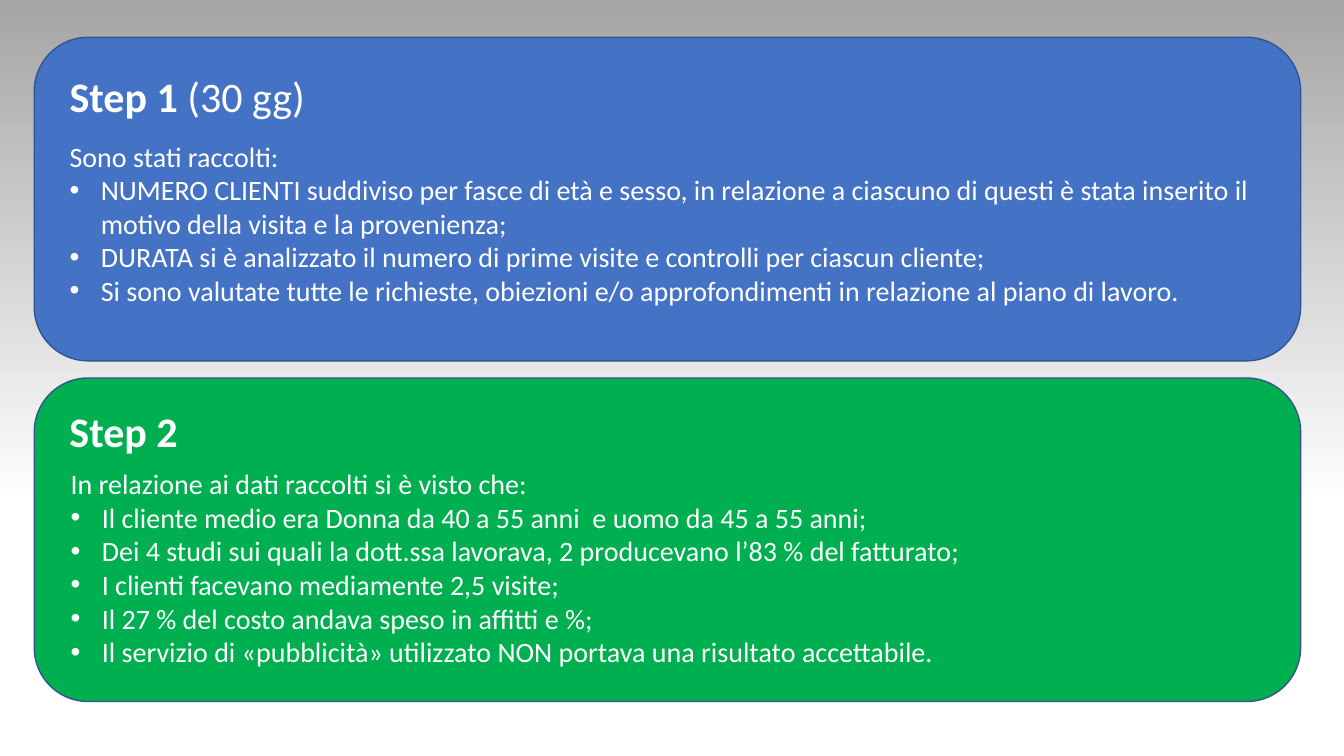
from lxml.etree import SubElement
from pptx import Presentation
from pptx.dml.color import RGBColor
from pptx.enum.shapes import MSO_SHAPE
from pptx.enum.text import MSO_ANCHOR, MSO_AUTO_SIZE, PP_ALIGN
from pptx.oxml.ns import qn
from pptx.util import Inches, Pt

WHITE = "FFFFFF"
FIRST = [
    "Sono stati raccolti:",
    "NUMERO CLIENTI suddiviso per fasce di età e sesso, in relazione a ciascuno di questi è stata inserito il "
    "motivo della visita e la provenienza;",
    "DURATA si è analizzato il numero di prime visite e controlli per ciascun cliente;",
    "Si sono valutate tutte le richieste, obiezioni e/o approfondimenti in relazione al piano di lavoro.",
]
SECOND = [
    "In relazione ai dati raccolti si è visto che:",
    "Il cliente medio era Donna da 40 a 55 anni  e uomo da 45 a 55 anni;",
    "Dei 4 studi sui quali la dott.ssa lavorava, 2 producevano l’83 % del fatturato;",
    "I clienti facevano mediamente 2,5 visite;",
    "Il 27 % del costo andava speso in affitti e %;",
    "Il servizio di «pubblicità» utilizzato NON portava una risultato accettabile.",
]


def color(value):
    return RGBColor.from_string(value)


def paint_back(slide):
    fill = slide.background.fill
    fill.gradient()
    fill.gradient_angle = 90
    for stop, place, tone in zip(fill.gradient_stops, (0.33, 1), (WHITE, "A5A5A5")):
        stop.position = place
        stop.color.rgb = color(tone)


def add_panel(slide, top, tone, depth):
    panel = slide.shapes.add_shape(
        MSO_SHAPE.ROUNDED_RECTANGLE, Inches(0.34), Inches(top), Inches(12.56), Inches(3.21))
    panel.shadow.inherit = False
    panel.fill.solid()
    panel.fill.fore_color.rgb = color(tone)
    panel.line.color.rgb = color("325491")
    panel.line.width = Pt(1)
    slide.shapes._spTree.insert(depth, panel._element)


def set_box(shape, left, top, width, height):
    shape.left, shape.top = Inches(left), Inches(top)
    shape.width, shape.height = Inches(width), Inches(height)
    frame = shape.text_frame
    frame.word_wrap = True
    frame.auto_size = MSO_AUTO_SIZE.NONE
    frame.vertical_anchor = MSO_ANCHOR.TOP
    return frame


def add_run(para, text, size, bold=False):
    run = para.add_run()
    run.text = text
    font = run.font
    font.name = "Calibri"
    font.size = Pt(size)
    font.bold = bold
    font.color.rgb = color(WHITE)


def set_head(shape, top, parts):
    para = set_box(shape, 0.59, top, 2.98, 0.61).paragraphs[0]
    para.alignment = PP_ALIGN.LEFT
    for text, bold in parts:
        add_run(para, text, 30, bold)


def set_mark(para, shown):
    props = para._p.get_or_add_pPr()
    indent = Inches(0.31) if shown else 0
    props.set("marL", str(indent))
    props.set("indent", str(-indent))
    if shown:
        SubElement(props, qn("a:buFont"), typeface="Arial")
        SubElement(props, qn("a:buChar"), char="•")
    else:
        SubElement(props, qn("a:buNone"))


def set_list(shape, left, top, width, height, lines):
    frame = set_box(shape, left, top, width, height)
    for i, line in enumerate(lines):
        para = frame.add_paragraph() if i else frame.paragraphs[0]
        set_mark(para, i > 0)
        para.alignment = PP_ALIGN.LEFT
        para.space_before = Pt(0)
        para.line_spacing = 1.0
        add_run(para, line, 20)


def main():
    deck = Presentation()
    deck.slide_width, deck.slide_height = Inches(13.33), Inches(7.5)
    slide = deck.slides.add_slide(deck.slide_layouts[3])
    paint_back(slide)
    add_panel(slide, 0.37, "4472C4", 2)
    add_panel(slide, 3.75, "00B050", 3)
    title, upper, lower = slide.placeholders
    set_head(title, 0.65, [("Step 1", True), (" (30 gg)", False)])
    set_list(upper, 0.59, 1.33, 12.06, 1.78, FIRST)
    label = slide.shapes.add_textbox(0, 0, 0, 0)
    set_head(label, 3.97, [("Step 2", True)])
    set_list(lower, 0.6, 4.58, 10.76, 2.3, SECOND)
    deck.save("out.pptx")


if __name__ == "__main__":
    main()
